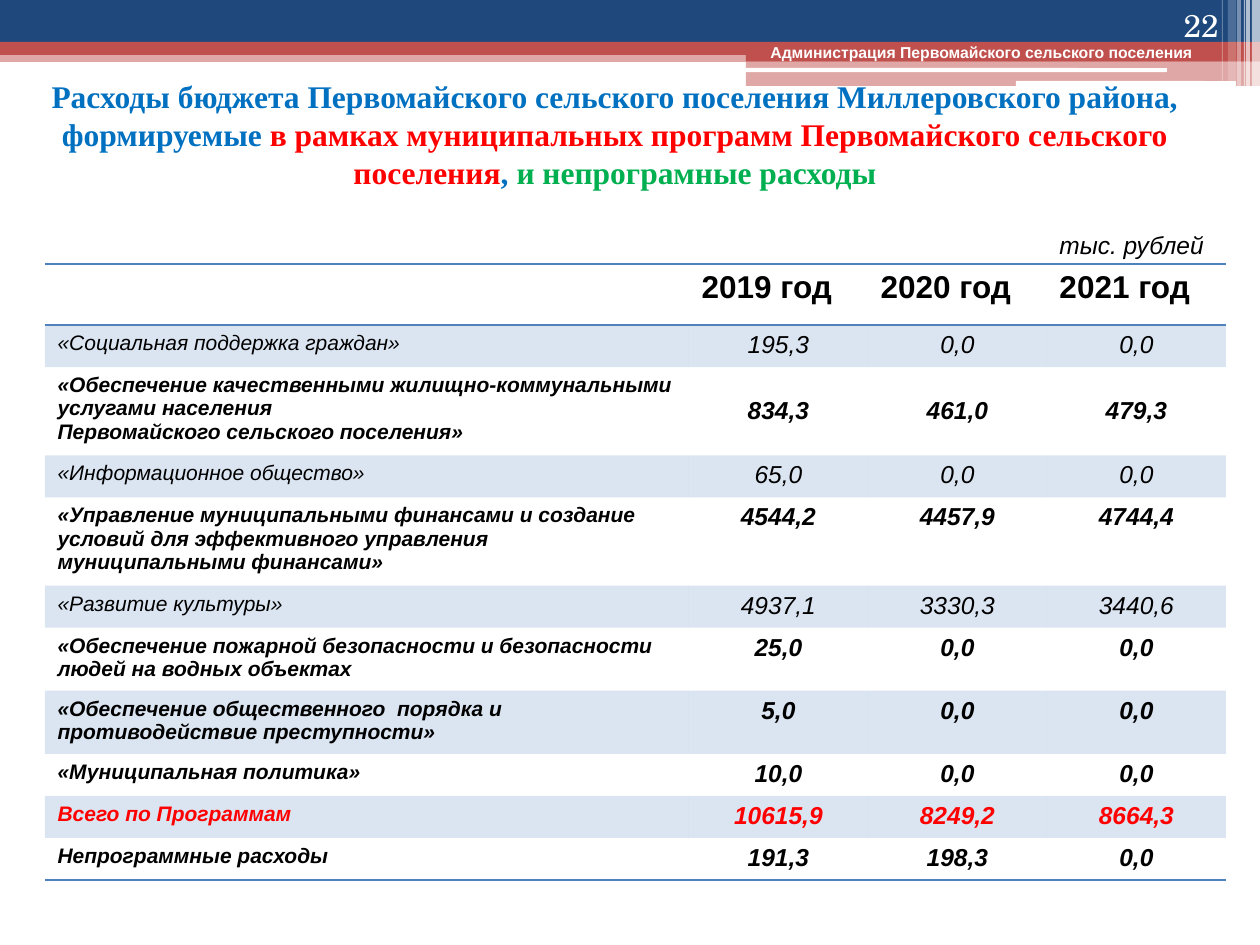
import pptx
import pptx.util
import pptx.dml.color
import pptx.enum.shapes
import pptx.enum.text
import pptx.oxml
import pptx.oxml.ns

PX = 914400 // 126
SHAPE = pptx.enum.shapes.MSO_SHAPE
ALIGN = pptx.enum.text.PP_ALIGN
ANCHOR = pptx.enum.text.MSO_ANCHOR
NAVY, BRICK, BLUE, WHITE = "1F497D", "C0504D", "4F81BD", "FFFFFF"
BLACK, RED = "000000", "FF0000"
NO_TABLE_STYLE = "{2D5ABB26-0587-4C30-8999-92F81FD0307C}"

BANDS = [
    (0, 50, 1260, 12, BRICK, 50),
    (0, 0, 1260, 43, NAVY, 100),
    (0, 42, 1260, 13, BRICK, 100),
    (746, 49, 514, 12, BRICK, 100),
    (746, 61, 514, 25, BRICK, 50),
]
ROUNDED_BARS = [(745, 68, 422, 4), (1016, 81, 220, 5)]
STRIPES = [
    (1252, 8, 86, 65),
    (1246, 4, 86, 65),
    (1244, 1, 86, 60),
    (1237, 4, 86, 40),
    (1228, 8, 81, 20),
    (1222, 1, 81, 30),
]
TITLE = [
    ("Расходы бюджета Первомайского сельского поселения Миллеровского района, формируемые ", "0070C0"),
    ("в рамках муниципальных программ Первомайского сельского поселения", RED),
    (", ", "0070C0"),
    ("и непрограмные расходы", "00B050"),
]
COLUMN_WIDTHS = [644, 179, 179, 179]
HEADER = ["", "2019 год", "2020 год", "2021 год"]
HEADER_HEIGHT, MINIMUM_ROW_HEIGHT = 61, 20
PROGRAMS = [
    ("«Социальная поддержка граждан»", "195,3", "0,0", "0,0"),
    ("«Обеспечение качественными жилищно-коммунальными услугами населения\n"
     "Первомайского сельского поселения»", "834,3", "461,0", "479,3"),
    ("«Информационное общество»", "65,0", "0,0", "0,0"),
    ("«Управление муниципальными финансами и создание условий для эффективного "
     "управления муниципальными финансами»", "4544,2", "4457,9", "4744,4"),
    ("«Развитие культуры»", "4937,1", "3330,3", "3440,6"),
    ("«Обеспечение пожарной безопасности и безопасности людей на водных объектах",
     "25,0", "0,0", "0,0"),
    ("«Обеспечение общественного  порядка и противодействие преступности»",
     "5,0", "0,0", "0,0"),
    ("«Муниципальная политика»", "10,0", "0,0", "0,0"),
    ("Всего по Программам", "10615,9", "8249,2", "8664,3"),
    ("Непрограммные расходы", "191,3", "198,3", "0,0"),
]
LIGHT_ROWS = {1, 3, 5}
CENTERED_ROW, TOTAL_ROW = 2, 9


def px(*lengths):
    return [length * PX for length in lengths]


def color(value):
    return pptx.dml.color.RGBColor.from_string(value)


def paint(fill, properties, value, opacity=100):
    fill.solid()
    fill.fore_color.rgb = color(value)
    if opacity < 100:
        tint = properties.find(pptx.oxml.ns.qn("a:solidFill"))[0]
        alpha = tint.makeelement(pptx.oxml.ns.qn("a:alpha"), {"val": str(opacity * 1000)})
        tint.append(alpha)


def style_font(font, size, value, name="Arial", bold=False, italic=False):
    font.size = pptx.util.Pt(size)
    font.name = name
    font.bold = bold
    font.italic = italic
    font.color.rgb = color(value)


def add_bar(page, left, top, width, height, value, opacity=100, kind=SHAPE.RECTANGLE):
    bar = page.shapes.add_shape(kind, *px(left, top, width, height))
    bar.shadow.inherit = False
    bar.line.fill.background()
    paint(bar.fill, bar.element.spPr, value, opacity)


def add_label(page, area, text, align=ALIGN.LEFT, anchor=ANCHOR.TOP, **font):
    box = page.shapes.add_textbox(*px(*area))
    frame = box.text_frame
    frame.word_wrap = True
    frame.margin_right = 0 if align == ALIGN.LEFT else frame.margin_right
    frame.vertical_anchor = anchor
    frame.text = text
    para = frame.paragraphs[0]
    para.alignment = align
    style_font(para.font, **font)


def add_header_band(page):
    for band in BANDS:
        add_bar(page, *band)
    for area in ROUNDED_BARS:
        add_bar(page, *area, WHITE, kind=SHAPE.ROUNDED_RECTANGLE)
    for left, width, height, opacity in STRIPES:
        add_bar(page, left, 0, width, height, WHITE, opacity)


def fill_title(page):
    title = page.shapes.title
    title.left, title.top, title.width, title.height = px(0, 76, 1230, 159)
    frame = title.text_frame
    frame.word_wrap = True
    frame.auto_size = pptx.enum.text.MSO_AUTO_SIZE.NONE
    frame.vertical_anchor = ANCHOR.MIDDLE
    frame.margin_bottom = 50 * PX
    para = frame.paragraphs[0]
    para.alignment = ALIGN.CENTER
    for text, value in TITLE:
        span = para.add_run()
        span.text = text
        style_font(span.font, 18, value, "Times New Roman", bold=True)


def add_border(cell, side):
    line = pptx.oxml.parse_xml(
        f'<a:{side} {pptx.oxml.ns.nsdecls("a")} w="12700"><a:solidFill>'
        f'<a:srgbClr val="{BLUE}"/></a:solidFill></a:{side}>'
    )
    cell._tc.get_or_add_tcPr().insert(0, line)


def fill_cell(cell, text, align, size, value, bold, italic):
    cell.text = text
    for para in cell.text_frame.paragraphs:
        para.alignment = align
        style_font(para.font, size, value, bold=bold, italic=italic)


def add_budget_table(page):
    height = HEADER_HEIGHT + MINIMUM_ROW_HEIGHT * len(PROGRAMS)
    area = px(45, 264, sum(COLUMN_WIDTHS), height)
    table = page.shapes.add_table(len(PROGRAMS) + 1, len(HEADER), *area).table
    table._tbl.tblPr.find(pptx.oxml.ns.qn("a:tableStyleId")).text = NO_TABLE_STYLE
    for column, width in zip(table.columns, COLUMN_WIDTHS):
        column.width = width * PX
    table.rows[0].height = HEADER_HEIGHT * PX
    for index, text in enumerate(HEADER):
        cell = table.cell(0, index)
        fill_cell(cell, text, ALIGN.LEFT, 18, BLACK, True, False)
        add_border(cell, "lnB")
        add_border(cell, "lnT")
        cell.fill.background()
    for number, texts in enumerate(PROGRAMS, 1):
        table.rows[number].height = MINIMUM_ROW_HEIGHT * PX
        value = RED if number == TOTAL_ROW else BLACK
        for index, text in enumerate(texts):
            cell = table.cell(number, index)
            align, size = (ALIGN.CENTER, 14) if index else (ALIGN.LEFT, 12)
            fill_cell(cell, text, align, size, value, number not in LIGHT_ROWS, True)
            if number == CENTERED_ROW and index:
                cell.vertical_anchor = ANCHOR.MIDDLE
            if number == len(PROGRAMS):
                add_border(cell, "lnB")
            if number % 2:
                paint(cell.fill, cell._tc.get_or_add_tcPr(), BLUE, 20)
            else:
                cell.fill.background()


def main():
    deck = pptx.Presentation()
    deck.slide_width, deck.slide_height = px(1260, 945)
    page = deck.slides.add_slide(deck.slide_layouts[5])
    add_header_band(page)
    add_label(page, (758, 37, 450, 50), "Администрация Первомайского сельского поселения",
              size=9, value=WHITE, bold=True)
    fill_title(page)
    add_label(page, (1126, 0, 105, 50), "22", ALIGN.RIGHT, ANCHOR.BOTTOM,
              size=18, value=WHITE, name="TeX Gyre Schola")
    add_budget_table(page)
    add_label(page, (1047, 224, 179, 43), "тыс. рублей", size=14, value=BLACK, italic=True)
    deck.save("out.pptx")


if __name__ == "__main__":
    main()
